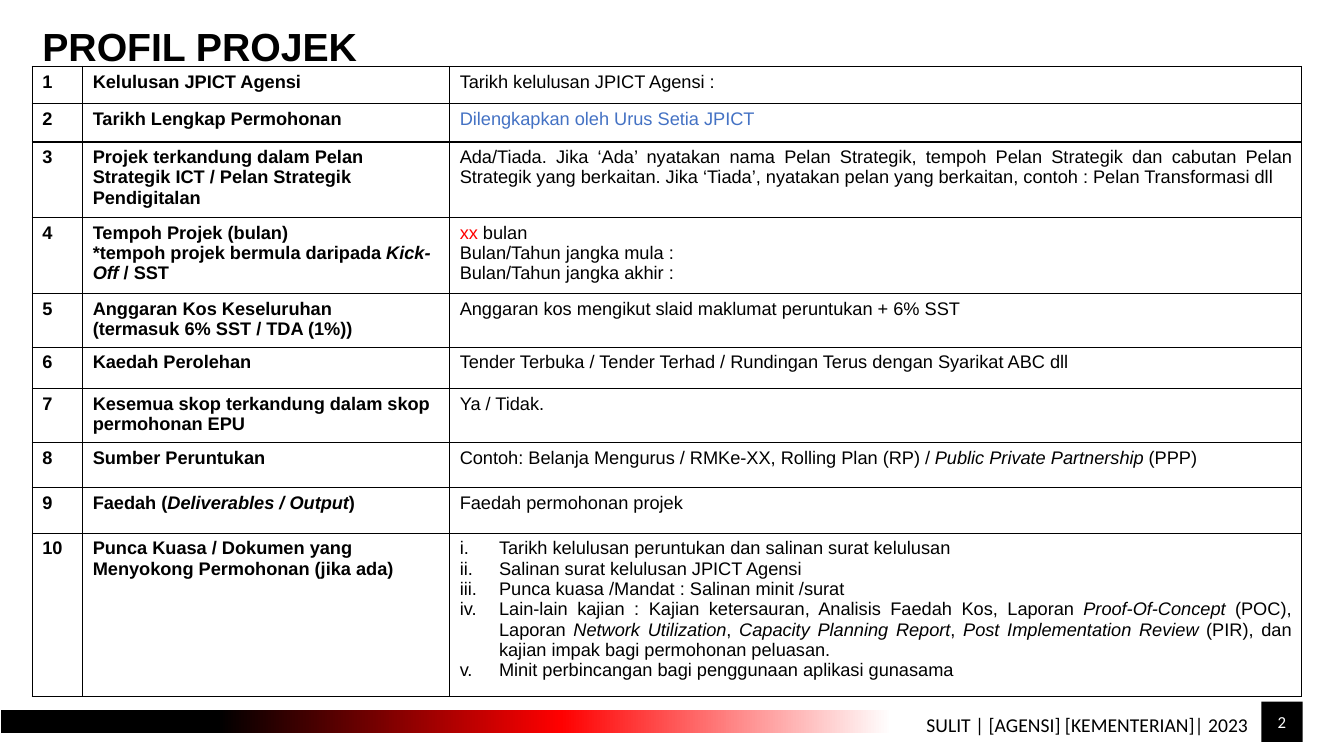
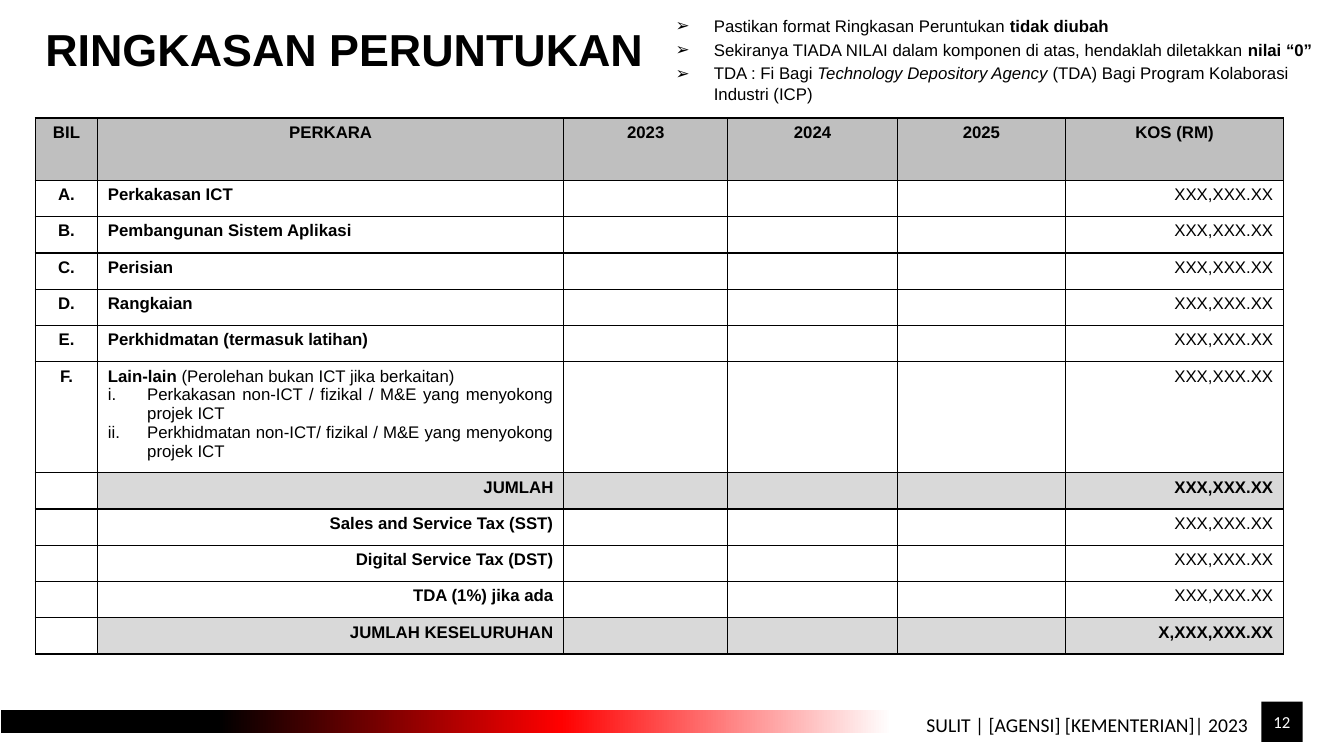
from lxml import etree
from pptx import Presentation
from pptx.dml.color import RGBColor
from pptx.enum import shapes, text
from pptx.oxml import ns
from pptx.util import Inches, Pt

COLOURS = {
    "black": "000000", "white": "FFFFFF", "red": "FF0000", "blue": "4472C4",
    "header": "BFBFBF", "total": "D9D9D9",
}
LEFT, CENTRE = text.PP_ALIGN.LEFT, text.PP_ALIGN.CENTER
RIGHT, JUSTIFY = text.PP_ALIGN.RIGHT, text.PP_ALIGN.JUSTIFY
BOLD, PLAIN, ITALIC = {"bold": True}, {"bold": False}, {"italic": True}
ROMAN = ("buAutoNum", {"type": "romanLcPeriod"})
ARROW = ("buChar", {"char": "➢"})


def write(frame, paragraphs, font="Arial", size=12, colour="black", bold=False,
          align=LEFT, bullet=None, indent=0.39, before=0):
    """Append paragraphs; each is a string or a list of strings and (string, format) pairs."""
    for pieces in paragraphs:
        paragraph = frame.add_paragraph() if frame.text else frame.paragraphs[0]
        paragraph.alignment = align
        paragraph.space_before = Pt(before)
        if bullet:
            tag, attributes = bullet
            properties = paragraph._p.get_or_add_pPr()
            properties.set("marL", str(Inches(indent)))
            properties.set("indent", str(-Inches(indent)))
            etree.SubElement(properties, ns.qn("a:buFont"), typeface=font)
            etree.SubElement(properties, ns.qn(f"a:{tag}"), **attributes)
        for piece in [pieces] if isinstance(pieces, str) else pieces:
            words, changes = (piece, {}) if isinstance(piece, str) else piece
            run = paragraph.add_run()
            run.text = words
            run.font.name = font
            run.font.size = Pt(size)
            run.font.bold = changes.get("bold", bold)
            run.font.italic = changes.get("italic", False)
            run.font.color.rgb = RGBColor.from_string(COLOURS[changes.get("colour", colour)])


def draw_grid(slide, left, top, widths, heights):
    """Add an empty white table with thin black borders."""
    grid = slide.shapes.add_table(len(heights), len(widths), Inches(left), Inches(top),
                                  Inches(sum(widths)), Inches(sum(heights))).table
    grid.first_row = grid.horz_banding = False
    for column, width in zip(grid.columns, widths):
        column.width = Inches(width)
    for row, height in zip(grid.rows, heights):
        row.height = Inches(height)
    for cell in grid.iter_cells():
        for side in ("lnL", "lnR", "lnT", "lnB"):
            line = etree.SubElement(cell._tc.get_or_add_tcPr(), ns.qn(f"a:{side}"), w=str(Pt(1)))
            solid = etree.SubElement(line, ns.qn("a:solidFill"))
            etree.SubElement(solid, ns.qn("a:srgbClr"), val=COLOURS["black"])
        cell.fill.solid()
        cell.fill.fore_color.rgb = RGBColor.from_string(COLOURS["white"])
        cell.text_frame.paragraphs[0]._p.get_or_add_endParaRPr().set("sz", "1200")
    return grid


deck = Presentation()
deck.slide_width, deck.slide_height = Inches(13.33), Inches(7.5)
profile = deck.slides.add_slide(deck.slide_layouts[5])
summary = deck.slides.add_slide(deck.slide_layouts[1])

# Shared title style, footer band and page number
for slide, heading, size, left, width, page in (
    (profile, "PROFIL PROJEK", 28, 0.32, 9.89, "2"),
    (summary, "RINGKASAN PERUNTUKAN", 32, 0.35, 6.83, "12"),
):
    title = slide.shapes.title
    title.left, title.top = Inches(left), Inches(0.17)
    title.width, title.height = Inches(width), Inches(0.55)
    title.text_frame.auto_size = text.MSO_AUTO_SIZE.NONE
    title.text_frame.vertical_anchor = text.MSO_ANCHOR.TOP
    write(title.text_frame, [heading], size=size, bold=True)

    band = slide.shapes.add_shape(shapes.MSO_SHAPE.RECTANGLE, Inches(0.01), Inches(7.04),
                                  Inches(12.62), Inches(0.23))
    band.shadow.inherit = False
    band.line.fill.background()
    band.fill.gradient()
    band.fill.gradient_angle = 0
    stops = band.fill._fill._gradFill.find(ns.qn("a:gsLst"))
    for stop in list(stops):
        stops.remove(stop)
    for position, colour in ((17, "black"), (44, "red"), (70, "white")):
        stop = etree.SubElement(stops, ns.qn("a:gs"), pos=str(position * 1000))
        etree.SubElement(stop, ns.qn("a:srgbClr"), val=COLOURS[colour])

    footer = slide.shapes.add_textbox(Inches(7.86), Inches(7.02), Inches(4.62), Inches(0.34))
    footer.text_frame.word_wrap = True
    footer.text_frame.vertical_anchor = text.MSO_ANCHOR.MIDDLE
    write(footer.text_frame, ["SULIT | [AGENSI] [KEMENTERIAN]| 2023"],
          font="Calibri", size=14, align=RIGHT)

    number = slide.shapes.add_shape(shapes.MSO_SHAPE.RECTANGLE, Inches(12.51), Inches(6.96),
                                    Inches(0.41), Inches(0.4))
    number.shadow.inherit = False
    number.line.fill.background()
    number.fill.solid()
    number.fill.fore_color.rgb = RGBColor.from_string(COLOURS["black"])
    number.text_frame.margin_left = number.text_frame.margin_right = 0
    number.text_frame.vertical_anchor = text.MSO_ANCHOR.MIDDLE
    write(number.text_frame, [page], font="Calibri", colour="white", align=CENTRE)

# Project profile: topic and details of each numbered row
profile_rows = [
    (["Kelulusan JPICT Agensi"], ["Tarikh kelulusan JPICT Agensi :"]),
    (["Tarikh Lengkap Permohonan"],
     [[("Dilengkapkan oleh Urus Setia JPICT", {"colour": "blue"})]]),
    (["Projek terkandung dalam Pelan Strategik ICT / Pelan Strategik Pendigitalan"],
     ["Ada/Tiada. Jika ‘Ada’ nyatakan nama Pelan Strategik, tempoh Pelan Strategik dan "
      "cabutan Pelan Strategik yang berkaitan. Jika ‘Tiada’, nyatakan pelan yang berkaitan, "
      "contoh : Pelan Transformasi dll"]),
    (["Tempoh Projek (bulan)",
      ["*tempoh projek bermula daripada ", ("Kick-Off ", ITALIC), "/ SST"]],
     [[("xx ", {"colour": "red"}), "bulan"],
      "Bulan/Tahun jangka mula :", "Bulan/Tahun jangka akhir :"]),
    (["Anggaran Kos Keseluruhan", "(termasuk 6% SST / TDA (1%))"],
     ["Anggaran kos mengikut slaid maklumat peruntukan + 6% SST"]),
    (["Kaedah Perolehan"],
     ["Tender Terbuka / Tender Terhad / Rundingan Terus dengan Syarikat ABC dll"]),
    (["Kesemua skop terkandung dalam skop permohonan EPU"], ["Ya / Tidak."]),
    (["Sumber Peruntukan"],
     [["Contoh: Belanja Mengurus / RMKe-XX, Rolling Plan (RP) / ",
       ("Public Private Partnership ", ITALIC), "(PPP)"]]),
    ([["Faedah (", ("Deliverables / Output", ITALIC), ")"]], ["Faedah permohonan projek"]),
    (["Punca Kuasa / Dokumen yang Menyokong Permohonan (jika ada)"],
     ["Tarikh kelulusan peruntukan dan salinan surat kelulusan",
      "Salinan surat kelulusan JPICT Agensi",
      "Punca kuasa /Mandat : Salinan minit /surat",
      ["Lain-lain kajian : Kajian ketersauran, Analisis Faedah Kos, Laporan ",
       ("Proof-Of-Concept", ITALIC), " (POC), Laporan ", ("Network Utilization", ITALIC), ", ",
       ("Capacity Planning Report", ITALIC), ", ", ("Post Implementation Review", ITALIC),
       " (PIR), dan kajian impak bagi permohonan peluasan."],
      "Minit perbincangan bagi penggunaan aplikasi gunasama"]),
]
profile_grid = draw_grid(profile, 0.32, 0.66, [0.5, 3.64, 8.45],
                         [0.37, 0.38, 0.7, 0.7, 0.51, 0.41, 0.51, 0.45, 0.45, 1.51])
for index, (topic, details) in enumerate(profile_rows):
    write(profile_grid.cell(index, 0).text_frame, [str(index + 1)], size=13, bold=True)
    write(profile_grid.cell(index, 1).text_frame, topic, size=13, bold=True)
    write(profile_grid.cell(index, 2).text_frame, details, size=13, align=JUSTIFY,
          bullet=ROMAN if index == len(profile_rows) - 1 else None)

# Allocation summary: notes beside the title
notes = summary.placeholders[1]
notes.left, notes.top, notes.width, notes.height = (Inches(n) for n in (6.6, 0.11, 6.7, 0.9))
notes.text_frame.auto_size = text.MSO_AUTO_SIZE.NONE
write(notes.text_frame, [
    ["Pastikan format Ringkasan Peruntukan ", ("tidak diubah", BOLD)],
    ["Sekiranya TIADA NILAI dalam komponen di atas, hendaklah diletakkan ",
     ("nilai “0”", BOLD)],
    ["TDA : Fi Bagi ", ("Technology Depository Agency ", ITALIC),
     "(TDA) Bagi Program Kolaborasi Industri (ICP)"],
], bullet=ARROW, indent=0.38, before=2.4)

# Allocation summary: cost table
headers = ["BIL", "PERKARA", "2023", "2024", "2025", "KOS (RM)"]
items = ["Perkakasan ICT", "Pembangunan Sistem Aplikasi", "Perisian", "Rangkaian",
         "Perkhidmatan (termasuk latihan)",
         ["Lain-lain ", ("(Perolehan bukan ICT jika berkaitan)", PLAIN)]]
sums = ["JUMLAH", "Sales and Service Tax (SST)", "Digital Service Tax (DST)",
        "TDA (1%) jika ada", "JUMLAH KESELURUHAN"]
cost_grid = draw_grid(summary, 0.35, 1.17, [0.62, 4.62, 1.63, 1.68, 1.67, 2.16],
                      [0.62] + [0.36] * 5 + [1.03] + [0.36] * 5)
for column, header in enumerate(headers):
    cell = cost_grid.cell(0, column)
    cell.fill.fore_color.rgb = RGBColor.from_string(COLOURS["header"])
    write(cell.text_frame, [header], bold=True, align=CENTRE)

for row, label in enumerate(items + sums, start=1):
    is_item = row <= len(items)
    is_total = not is_item and label.startswith("JUMLAH")
    if is_item:
        write(cost_grid.cell(row, 0).text_frame, ["ABCDEF"[row - 1] + "."],
              bold=True, align=CENTRE)
    write(cost_grid.cell(row, 1).text_frame, [label], bold=True,
          align=LEFT if is_item else RIGHT)
    amount = "X,XXX,XXX.XX" if label == sums[-1] else "XXX,XXX.XX"
    write(cost_grid.cell(row, 5).text_frame, [amount], bold=is_total, align=RIGHT)
    if is_total:
        for column in range(1, len(headers)):
            cost_grid.cell(row, column).fill.fore_color.rgb = RGBColor.from_string(
                COLOURS["total"])

write(cost_grid.cell(len(items), 1).text_frame, [
    "Perkakasan non-ICT / fizikal / M&E yang menyokong projek ICT",
    "Perkhidmatan non-ICT/ fizikal / M&E yang menyokong projek ICT",
], align=JUSTIFY, bullet=ROMAN)

deck.save("out.pptx")
